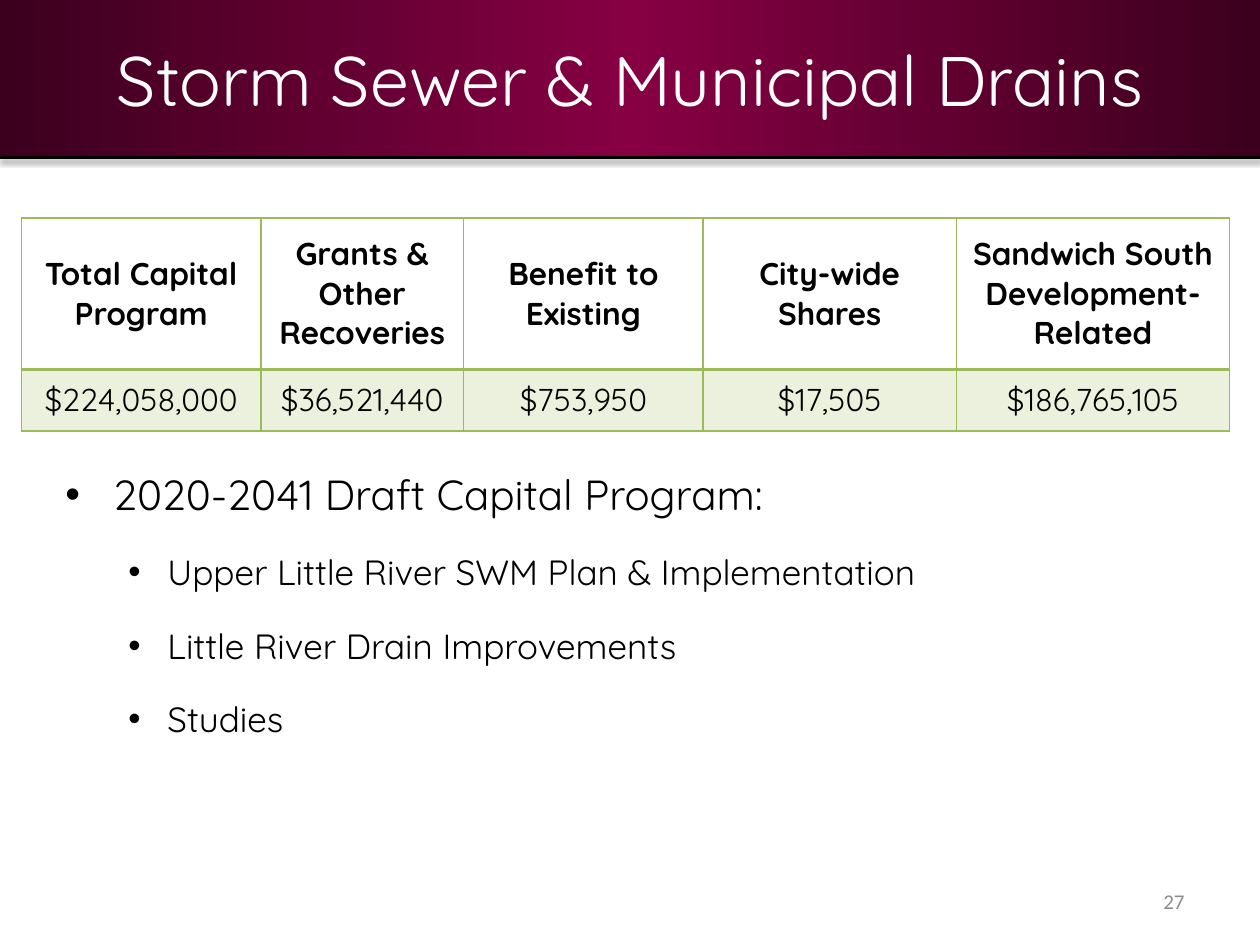
from copy import deepcopy
from dataclasses import dataclass

from lxml import etree
from pptx import Presentation, util as u
from pptx.dml.color import RGBColor
from pptx.enum import shapes, text
from pptx.oxml import parse_xml
from pptx.oxml.ns import nsdecls, qn


@dataclass(frozen=True)
class Theme:
    font: str = "Quicksand"
    number_font: str = "Calibri"
    ink: str = "000000"
    paper: str = "FFFFFF"
    muted: str = "8C8C8C"
    green: str = "9BBB59"
    banner: tuple = ("3C001E", "860043", "3C001E")
    title: int = 40
    bullets: tuple = (24, 20)
    cell: int = 18
    number: int = 12


class Deck:
    """Places elements on a grid of 100 columns by 75 rows."""
    COLS, ROWS = 100, 75

    def __init__(self, prs, theme):
        self.prs, self.t = prs, theme
        self.s = prs.slides.add_slide(prs.slide_layouts[6])

    def x(self, cols):
        return round(self.prs.slide_width * cols / self.COLS)

    def y(self, rows):
        return round(self.prs.slide_height * rows / self.ROWS)

    def box(self, x, y, w, h):
        return self.x(x), self.y(y), self.x(w), self.y(h)

    def run(self, p, words, size, color=None, font=None, bold=False):
        r = p.add_run()
        r.text = words
        r.font.size, r.font.bold = u.Pt(size), bold
        r.font.name = font or self.t.font
        r.font.color.rgb = RGBColor.from_string(color or self.t.ink)

    def frame(self, area, anchor):
        tf = self.s.shapes.add_textbox(*self.box(*area)).text_frame
        tf.word_wrap, tf.vertical_anchor = True, anchor
        return tf

    def label(self, area, words, size, color, align, font=None):
        p = self.frame(area, text.MSO_ANCHOR.MIDDLE).paragraphs[0]
        p.alignment = align
        self.run(p, words, size, color, font)

    def banner(self, area):
        sp = self.s.shapes.add_shape(shapes.MSO_SHAPE.RECTANGLE, *self.box(*area))
        sp.shadow.inherit = False
        sp.line.fill.background()
        sp.fill.gradient()
        sp.fill.gradient_angle = 0
        first = sp._element.find(".//" + qn("a:gs"))
        first.addnext(deepcopy(first))
        for i, (stop, color) in enumerate(zip(sp.fill.gradient_stops, self.t.banner)):
            stop.position = i / 2
            stop.color.rgb = RGBColor.from_string(color)

    def shadowed_rule(self, row, width):
        line = self.s.shapes.add_connector(shapes.MSO_CONNECTOR.STRAIGHT,
                                           0, self.y(row), self.x(self.COLS), self.y(row))
        line.line.color.rgb = RGBColor.from_string(self.t.ink)
        line.line.width = u.Pt(width)
        line._element.spPr.append(parse_xml(
            f'<a:effectLst {nsdecls("a")}><a:outerShdw blurRad="{u.Pt(3.1)}" '
            f'dist="{u.Pt(1.6)}" dir="5400000" rotWithShape="0">'
            f'<a:srgbClr val="{self.t.ink}"><a:alpha val="38000"/></a:srgbClr>'
            '</a:outerShdw></a:effectLst>'))

    def borders(self, cell, **widths):
        tc_pr = cell._tc.get_or_add_tcPr()
        for i, side in enumerate("LRTB"):
            tc_pr.insert(i, parse_xml(
                f'<a:ln{side} {nsdecls("a")} w="{u.Pt(widths.get(side, 1))}"><a:solidFill>'
                f'<a:srgbClr val="{self.t.green}"/></a:solidFill></a:ln{side}>'))

    def tint(self, cell, percent):
        cell.fill.solid()
        cell.fill.fore_color.rgb = RGBColor.from_string(self.t.green)
        color = cell._tc.tcPr.find(qn("a:solidFill"))[0]
        etree.SubElement(color, qn("a:alpha")).set("val", str(percent * 1000))

    def table(self, x, y, widths, heights, rows):
        area = self.box(x, y, sum(widths), sum(heights))
        table = self.s.shapes.add_table(len(rows), len(widths), *area).table
        table.first_row = table.horz_banding = False
        for column, width in zip(table.columns, widths):
            column.width = self.x(width)
        for i, (row, height) in enumerate(zip(rows, heights)):
            table.rows[i].height = self.y(height)
            for j, words in enumerate(row):
                cell, header = table.cell(i, j), i == 0
                cell.vertical_anchor = text.MSO_ANCHOR.MIDDLE
                if header:
                    cell.fill.background()
                    self.borders(cell, B=2)
                else:
                    cell.margin_left = cell.margin_right = 0
                    cell.margin_top = cell.margin_bottom = 0
                    self.tint(cell, 20)
                    self.borders(cell, T=2)
                p = cell.text_frame.paragraphs[0]
                p.alignment = text.PP_ALIGN.CENTER
                self.run(p, words, self.t.cell, bold=header)

    def bullets(self, area, items):
        tf = self.frame(area, text.MSO_ANCHOR.TOP)
        indents = ((3.8, -3.8), (8.1, -3.1))
        for i, (level, words) in enumerate(items):
            p = tf.add_paragraph() if i else tf.paragraphs[0]
            p.level = level
            left, hanging = indents[level]
            p_pr = p._p.get_or_add_pPr()
            p_pr.set("marL", str(self.x(left)))
            p_pr.set("indent", str(self.x(hanging)))
            etree.SubElement(p_pr, qn("a:buFont")).set("typeface", "Arial")
            etree.SubElement(p_pr, qn("a:buChar")).set("char", "•")
            p.space_before, p.space_after = u.Pt(6 if i else 0), u.Pt(12)
            self.run(p, words, self.t.bullets[level])


def main():
    prs = Presentation()
    prs.slide_width, prs.slide_height = u.Inches(10), u.Inches(7.5)
    t = Theme()
    deck = Deck(prs, t)

    header = (0, 0, 100, 12.5)
    deck.banner(header)
    deck.label(header, "Storm Sewer & Municipal Drains", t.title, t.paper,
               text.PP_ALIGN.CENTER)
    deck.shadowed_rule(12.5, 2)
    deck.label((71.7, 69.5, 23.3, 4), "27", t.number, t.muted,
               text.PP_ALIGN.RIGHT, t.number_font)
    deck.table(1.7, 17.3, (19, 16.1, 19, 20.1, 21.7), (12, 4.9), (
        ("Total Capital Program", "Grants & Other Recoveries", "Benefit to Existing",
         "City-wide Shares", "Sandwich South Development-Related"),
        ("$224,058,000", "$36,521,440", "$753,950", "$17,505", "$186,765,105"),
    ))
    deck.bullets((4.2, 36.7, 90.8, 32.5), (
        (0, "2020-2041 Draft Capital Program:"),
        (1, "Upper Little River SWM Plan & Implementation"),
        (1, "Little River Drain Improvements"),
        (1, "Studies"),
    ))
    prs.save("out.pptx")


if __name__ == "__main__":
    main()
